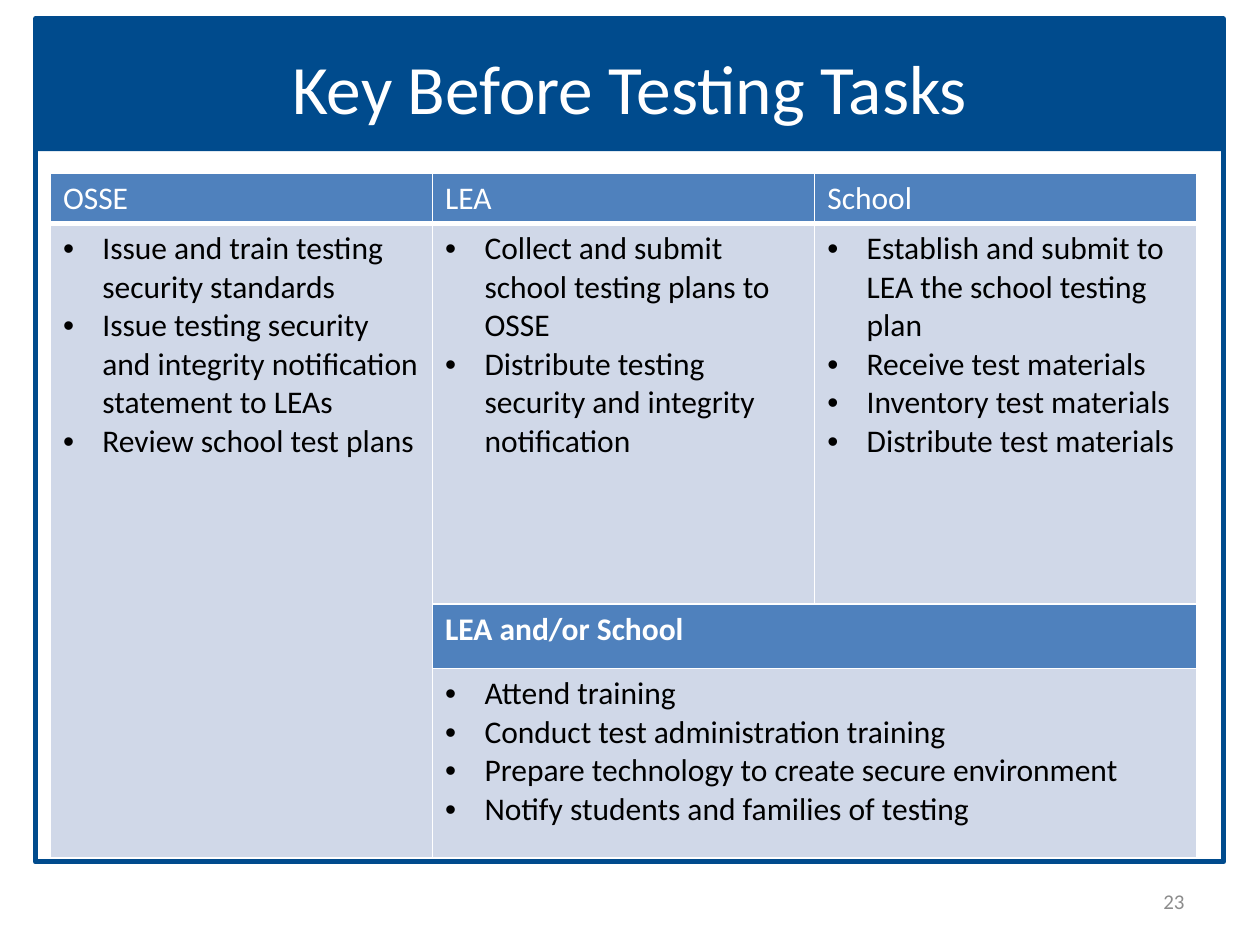
import pptx
import pptx.dml.color
import pptx.enum.shapes
import pptx.enum.text
import pptx.oxml
import pptx.oxml.ns
import pptx.util

Pt = pptx.util.Pt
RGBColor = pptx.dml.color.RGBColor
Align = pptx.enum.text.PP_ALIGN
Anchor = pptx.enum.text.MSO_ANCHOR

NAVY = RGBColor(0x00, 0x4B, 0x8D)
BLUE = RGBColor(0x4F, 0x81, 0xBD)
PALE = RGBColor(0xD0, 0xD8, 0xE8)
GREY = RGBColor(0x8C, 0x8C, 0x8C)
WHITE = RGBColor(0xFF, 0xFF, 0xFF)
BLACK = RGBColor(0x00, 0x00, 0x00)

FONT = "Calibri"
BULLET_INDENT = 22.5
HEADING = {"size": Pt(18), "name": FONT, "bold": False}
COLUMN_COUNT = 3
ROW_HEIGHTS = [28.8, 217.5, 36.8, 108]

# Each entry: row, column, last row, last column, is heading, bold, lines
TASK_CELLS = [
    (0, 0, 0, 0, True, False, ["OSSE"]),
    (0, 1, 0, 1, True, False, ["LEA"]),
    (0, 2, 0, 2, True, False, ["School"]),
    (1, 0, 3, 0, False, False, [
        "Issue and train testing security standards",
        "Issue testing security and integrity notification statement to LEAs",
        "Review school test plans"]),
    (1, 1, 1, 1, False, False, [
        "Collect and submit school testing plans to OSSE",
        "Distribute testing security and integrity notification"]),
    (1, 2, 1, 2, False, False, [
        "Establish and submit to LEA the school testing plan",
        "Receive test materials",
        "Inventory test materials",
        "Distribute test materials"]),
    (2, 1, 2, 2, True, True, ["LEA and/or School"]),
    (3, 1, 3, 2, False, False, [
        "Attend training",
        "Conduct test administration training",
        "Prepare technology to create secure environment",
        "Notify students and families of testing"]),
]


def add_run(paragraph, text, color, font_format):
    run = paragraph.add_run()
    run.text = text
    run.font.color.rgb = color
    for name, value in font_format.items():
        setattr(run.font, name, value)


def add_bullet(paragraph):
    properties = paragraph._p.get_or_add_pPr()
    properties.set("marL", str(Pt(BULLET_INDENT)))
    properties.set("indent", str(-Pt(BULLET_INDENT)))
    namespace = pptx.oxml.ns.nsdecls("a")
    for xml in (f'<a:buFont {namespace} typeface="Arial"/>',
                f'<a:buChar {namespace} char="•"/>'):
        properties.append(pptx.oxml.parse_xml(xml))


def set_borders(cell, bottom_width):
    # Borders must come before the fill in the cell properties
    properties = cell._tc.get_or_add_tcPr()
    widths = {"lnL": 1, "lnR": 1, "lnT": 1, "lnB": bottom_width}
    for position, (side, width) in enumerate(widths.items()):
        properties.insert(position, pptx.oxml.parse_xml(
            f'<a:{side} {pptx.oxml.ns.nsdecls("a")} w="{Pt(width)}">'
            f'<a:solidFill><a:srgbClr val="{WHITE}"/></a:solidFill></a:{side}>'))


def add_text(slide, box, text, color, size, alignment):
    shape = slide.shapes.add_textbox(*map(Pt, box))
    frame_format = {"word_wrap": True, "vertical_anchor": Anchor.MIDDLE}
    for name, value in frame_format.items():
        setattr(shape.text_frame, name, value)
    paragraph = shape.text_frame.paragraphs[0]
    paragraph.alignment = alignment
    add_run(paragraph, text, color, {"size": Pt(size), "name": FONT})


def add_frame(slide, box, band_height):
    left, top, width, height = box
    rectangle = pptx.enum.shapes.MSO_SHAPE.RECTANGLE
    # Title band
    band = slide.shapes.add_shape(
        rectangle, *map(Pt, (left, top, width, band_height)))
    band.shadow.inherit = False
    band.fill.solid()
    band.fill.fore_color.rgb = NAVY
    band.line.fill.background()
    # Outline around the content
    outline = slide.shapes.add_shape(rectangle, *map(Pt, box))
    outline.shadow.inherit = False
    outline.fill.background()
    outline.line.color.rgb = NAVY
    outline.line.width = Pt(3)


def add_task_table(slide, box):
    table = slide.shapes.add_table(
        len(ROW_HEIGHTS), COLUMN_COUNT, *map(Pt, box)).table
    for column in table.columns:
        column.width = Pt(box[2] / COLUMN_COUNT)
    for row, height in zip(table.rows, ROW_HEIGHTS):
        row.height = Pt(height)

    for top, left, bottom, right, is_heading, bold, lines in TASK_CELLS:
        cell = table.cell(top, left)
        if (top, left) != (bottom, right):
            cell.merge(table.cell(bottom, right))
        # Fill and borders over the whole span
        for row in range(top, bottom + 1):
            for column in range(left, right + 1):
                part = table.cell(row, column)
                part.fill.solid()
                part.fill.fore_color.rgb = BLUE if is_heading else PALE
                set_borders(part, 3 if row == 0 else 1)
        # Heading or bulleted tasks
        frame = cell.text_frame
        for index, line in enumerate(lines):
            paragraph = frame.add_paragraph() if index else frame.paragraphs[0]
            if not is_heading:
                add_bullet(paragraph)
            add_run(paragraph, line, WHITE if is_heading else BLACK,
                    {**HEADING, "bold": bold})


def main():
    presentation = pptx.Presentation()
    presentation.slide_width, presentation.slide_height = Pt(720), Pt(540)
    slide = presentation.slides.add_slide(presentation.slide_layouts[6])
    add_frame(slide, (20.2, 10.8, 679, 481.7), 75.6)
    add_text(slide, (36, 21.6, 648, 56.2), "Key Before Testing Tasks",
             WHITE, 39.6, Align.CENTER)
    add_text(slide, (516, 500.5, 168, 28.8), "23", GREY, 12, Align.RIGHT)
    add_task_table(slide, (28.8, 98.9, 655.2, sum(ROW_HEIGHTS)))
    presentation.save("out.pptx")


if __name__ == "__main__":
    main()
